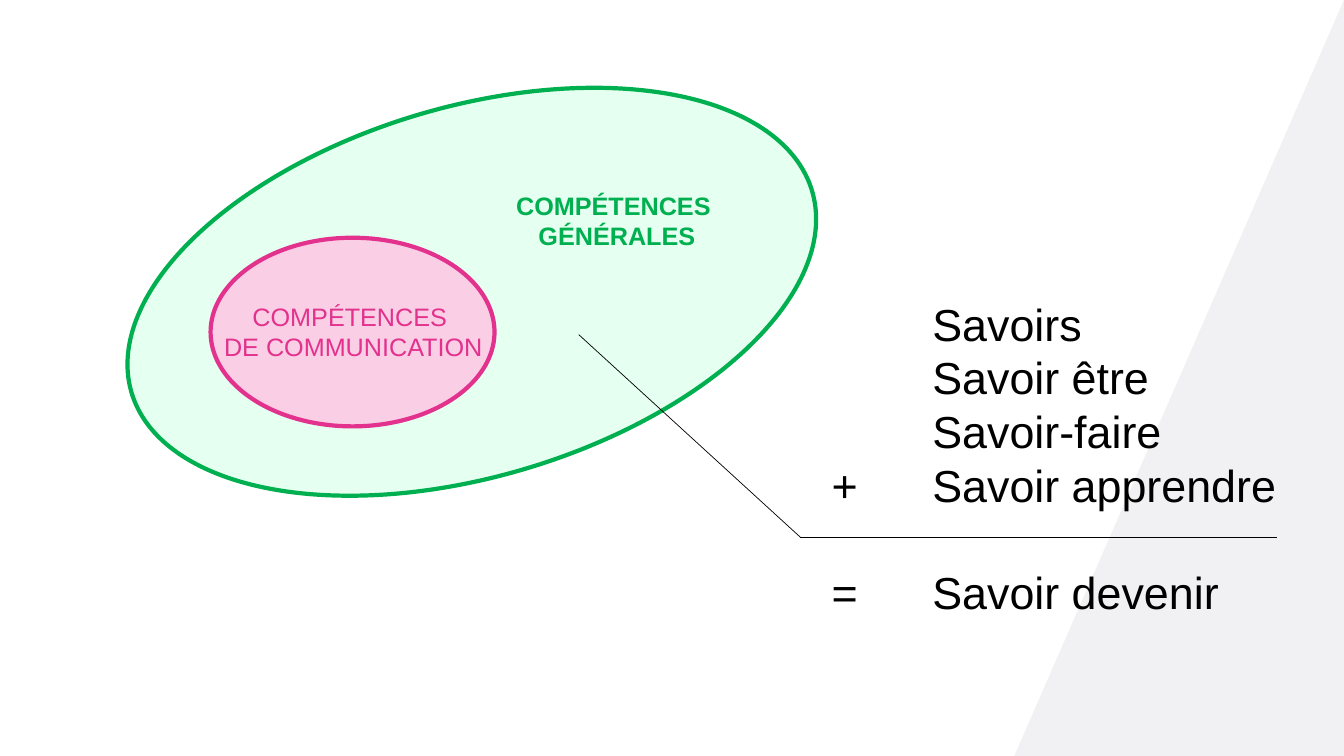
from collections import namedtuple

from pptx import Presentation
from pptx.dml.color import RGBColor
from pptx.enum.shapes import MSO_CONNECTOR as Line, MSO_SHAPE as Shape
from pptx.enum.text import PP_ALIGN as Align
from pptx.oxml.ns import qn
from pptx.util import Inches, Pt
from lxml.etree import SubElement

Box = namedtuple("Box", "left top width height")
GREEN, PINK, BLACK = "00B050", "E2328D", "000000"
LEADING = 1.2


def color(value):
    """Turn a hex string into a colour."""
    return RGBColor.from_string(value)


def inside(box, left, top, width=0, height=0):
    """Return the part of a box given in percent of its size."""
    return Box(
        int(box.left + box.width * left / 100),
        int(box.top + box.height * top / 100),
        int(box.width * width / 100),
        int(box.height * height / 100),
    )


def add_figure(page, kind, box, fill, outline=None):
    """Add a filled shape with an optional outline."""
    figure = page.shapes.add_shape(kind, *box)
    figure.shadow.inherit = False
    figure.fill.solid()
    figure.fill.fore_color.rgb = color(fill)
    if outline:
        figure.line.color.rgb = color(outline)
        figure.line.width = Pt(3)
    else:
        figure.line.fill.background()
    return figure


def add_line(page, start, end):
    """Add a thin black line between two points."""
    line = page.shapes.add_connector(
        Line.STRAIGHT, start.left, start.top, end.left, end.top
    )
    line.line.color.rgb = color(BLACK)
    line.line.width = Pt(0.5)
    SubElement(line._element.spPr, qn("a:effectLst"))


def style(para, size, ink, bold=False):
    """Set the font and line pitch of a paragraph."""
    para.line_spacing = Pt(size * LEADING)
    para.font.name = "Arial"
    para.font.size = Pt(size)
    para.font.bold = bold
    para.font.color.rgb = color(ink)


def add_label(page, box, text, ink, bold=False):
    """Add a centred label that does not wrap."""
    frame = page.shapes.add_textbox(*box).text_frame
    frame.word_wrap = False
    para = frame.paragraphs[0]
    para.text = text
    para.alignment = Align.CENTER
    style(para, 18, ink, bold)


def add_backdrop(page, box):
    """Add the grey triangle with its right angle at the bottom right."""
    triangle = add_figure(page, Shape.RIGHT_TRIANGLE, box, "F1F1F3")
    triangle._element.spPr.find(qn("a:xfrm")).set("flipH", "1")


def add_competences(page, box):
    """Draw the two nested ellipses and their labels."""
    outer = add_figure(page, Shape.OVAL, box, "E5FFF1", GREEN)
    outer.rotation = 343.5
    add_figure(page, Shape.OVAL, inside(box, 13.2, 35.4, 40, 51), "FACEE5", PINK)
    add_label(page, inside(box, 13.5, 51.2, 39.6, 19.3),
              "COMPÉTENCES \vDE COMMUNICATION", PINK)
    add_label(page, inside(box, 54.7, 21.25, 31.5, 19.3),
              "COMPÉTENCES \vGÉNÉRALES", GREEN, True)


def add_sum(page, box):
    """Write the addition of skills with its rule and pointer."""
    frame = page.shapes.add_textbox(*inside(box, 4.44, 0, 141, 100)).text_frame
    frame.word_wrap = True
    rows = ["\tSavoirs", "\tSavoir être", "\tSavoir-faire",
            "+\tSavoir apprendre", "=\tSavoir devenir"]
    for index, row in enumerate(rows):
        para = frame.add_paragraph() if index else frame.paragraphs[0]
        para.text = row
        if row.startswith("="):
            para.space_before = Pt(32 * LEADING)
        stops = SubElement(para._p.get_or_add_pPr(), qn("a:tabLst"))
        SubElement(stops, qn("a:tab"), pos=str(Inches(1)), algn="l")
        style(para, 32, BLACK)
    corner = inside(box, 0, 73.3)
    add_line(page, corner, inside(box, 100, 73.3))
    add_line(page, inside(box, -46.5, 12.9), corner)


def main():
    """Build the slide and save it."""
    deck = Presentation()
    deck.slide_width, deck.slide_height = Inches(13.33), Inches(7.5)
    page = deck.slides.add_slide(deck.slide_layouts[6])
    whole = Box(0, 0, deck.slide_width, deck.slide_height)
    add_backdrop(page, inside(whole, 75.47, 0, 24.53, 100))
    add_competences(page, inside(whole, 8.7, 14.13, 52.81, 48.93))
    add_sum(page, inside(whole, 59.56, 38.53, 35.48, 44.4))
    deck.save("out.pptx")


if __name__ == "__main__":
    main()
